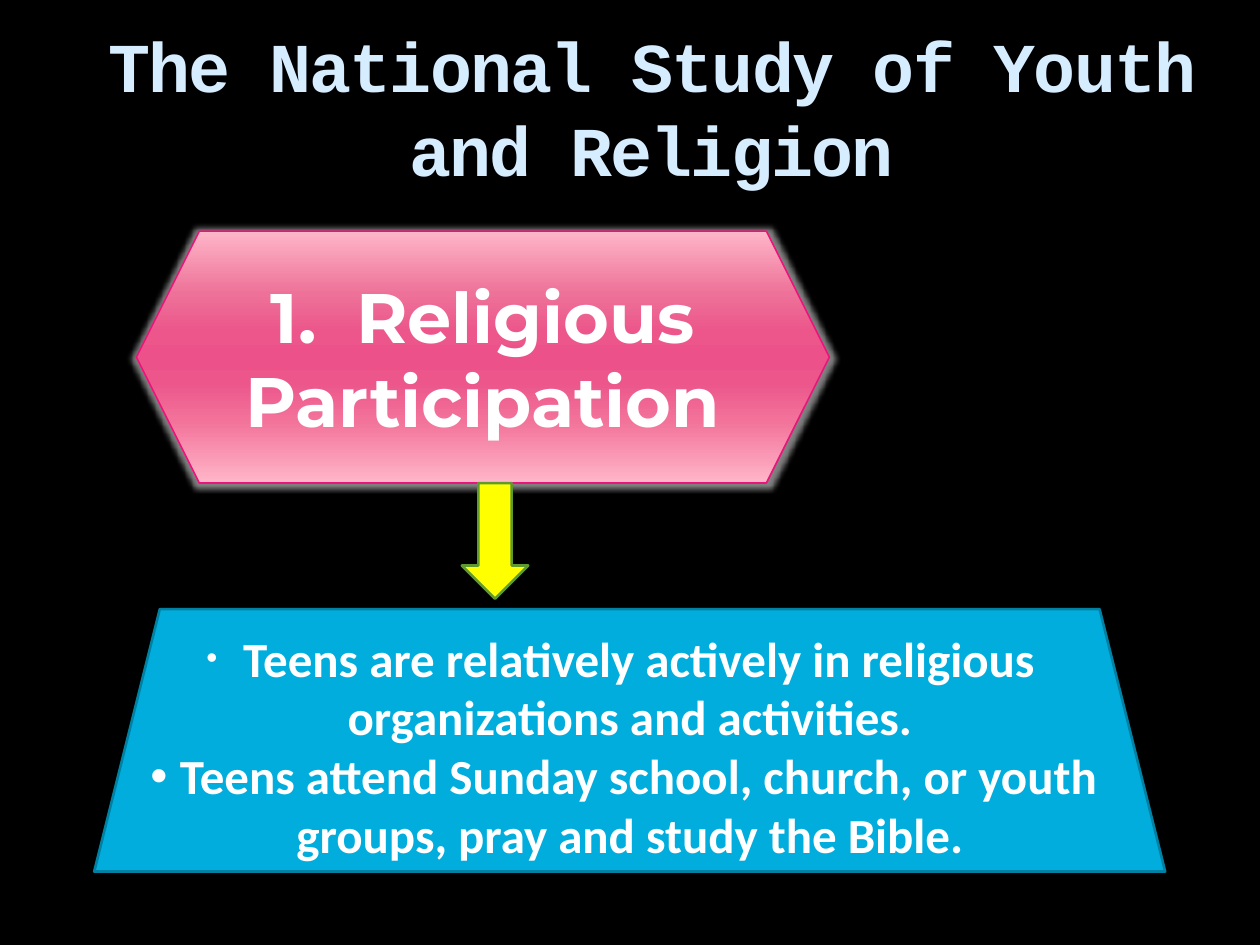
from dataclasses import dataclass

from lxml import etree
from pptx import Presentation
from pptx import util as u
from pptx.dml.color import RGBColor
from pptx.enum import shapes, text
from pptx.oxml import ns


@dataclass(frozen=True)
class Theme:
    back: str = "000000"
    title: str = "D6ECFF"
    light: str = "FFFFFF"
    blue: str = "00ADDC"
    teal: str = "0080A3"
    pink: str = "EA157A"
    yellow: str = "FFFF00"
    green: str = "5E9B2C"
    glow: str = "808080"
    blend: tuple = ((0, "FFB6C9"), (25, "ED7198"), (40, "EC568B"),
                    (50, "EC5289"), (60, "EC568B"), (75, "F2729A"),
                    (100, "FFB6C9"))
    mono: str = "Courier New"
    head: str = "Montserrat"
    body: str = "Calibri"
    big: int = 40
    mid: int = 28
    small: int = 18


T = Theme()
KIND = shapes.MSO_SHAPE


def rgb(code):
    return RGBColor.from_string(code)


def node(up, tag, **attrs):
    """Add an XML child with the given attributes."""
    kid = etree.SubElement(up, ns.qn(tag))
    for key, val in attrs.items():
        kid.set(key, str(val))
    return kid


def write(para, words, font=T.body, size=T.mid, color=T.light, track=0):
    """Add one bold, centred run to a paragraph."""
    para.alignment = text.PP_ALIGN.CENTER
    run = para.add_run()
    run.text = words
    run.font.name, run.font.size, run.font.bold = font, u.Pt(size), True
    run.font.color.rgb = rgb(color)
    if track:
        run.font._element.set("spc", str(track))


def frame(shape):
    """Give a shape's text frame wrapping and middle anchoring."""
    tf = shape.text_frame
    tf.word_wrap = True
    tf.auto_size = text.MSO_AUTO_SIZE.NONE
    tf.vertical_anchor = text.MSO_ANCHOR.MIDDLE
    return tf


def block(slide, kind, box, fill, line, width):
    """Add a filled, outlined preset shape without a shadow."""
    shape = slide.shapes.add_shape(kind, *map(u.Cm, box))
    shape.shadow.inherit = False
    shape.fill.solid()
    shape.fill.fore_color.rgb = rgb(fill)
    shape.line.color.rgb = rgb(line)
    shape.line.width = u.Pt(width)
    return shape


def shade(shape, stops):
    """Swap the solid fill for a vertical blend."""
    props = shape._element.spPr
    old = props.find(ns.qn("a:solidFill"))
    grad = etree.Element(ns.qn("a:gradFill"), rotWithShape="1")
    props.replace(old, grad)
    row = node(grad, "a:gsLst")
    for pos, code in stops:
        node(node(row, "a:gs", pos=pos * 1000), "a:srgbClr", val=code)
    node(grad, "a:lin", ang=90 * 60000, scaled=0)


def halo(shape, color):
    """Put a soft rim around the shape."""
    fx = shape._element.spPr.find(ns.qn("a:effectLst"))
    rim = node(fx, "a:outerShdw", blurRad=u.Pt(3), dist=u.Pt(0.5),
               dir=90 * 60000, sx=101500, sy=103000, algn="ctr",
               rotWithShape=0)
    node(rim, "a:srgbClr", val=color)


def bullet(para):
    props = para._p.get_or_add_pPr()
    node(props, "a:buFont", typeface="Arial")
    node(props, "a:buChar", char="•")


def title(slide, box, words):
    shape = slide.shapes.title
    shape.left, shape.top, shape.width, shape.height = map(u.Cm, box)
    tf = frame(shape)
    tf.margin_top = u.Cm(0.45)
    para = tf.paragraphs[0]
    para.line_spacing = u.Pt(48)
    write(para, words, font=T.mono, size=T.big, color=T.title, track=-100)


def points(slide, box, items):
    """Trapezoid with a bulleted list."""
    shape = block(slide, KIND.TRAPEZOID, box, T.blue, T.teal, 1.5)
    tf = frame(shape)
    for i, item in enumerate(items):
        para = tf.add_paragraph() if i else tf.paragraphs[0]
        if not i:
            write(para, " ", size=T.small)  # makes the first bullet small
        write(para, item)
        bullet(para)


def topic(slide, box, words):
    """Pink hexagon with the topic's name."""
    shape = block(slide, KIND.HEXAGON, box, T.pink, T.pink, 0.94)
    shade(shape, T.blend)
    halo(shape, T.glow)
    write(frame(shape).paragraphs[0], words, font=T.head, size=T.big)


def arrow(slide, box):
    block(slide, KIND.DOWN_ARROW, box, T.yellow, T.green, 1.5)


def main():
    deck = Presentation()
    deck.slide_width, deck.slide_height = u.Cm(25.4), u.Cm(19.05)
    slide = deck.slides.add_slide(deck.slide_layouts[5])
    slide.background.fill.solid()
    slide.background.fill.fore_color.rgb = rgb(T.back)

    title(slide, (1.7, 0, 22.86, 3.99),
          "The National Study of Youth and Religion")
    points(slide, (1.9, 12.28, 21.59, 5.29), (
        "Teens are relatively actively in religious organizations "
        "and activities.",
        "Teens attend Sunday school, church, or youth groups, "
        "pray and study the Bible."))
    topic(slide, (2.75, 4.66, 13.97, 5.08), "1.  Religious Participation")
    arrow(slide, (9.31, 9.74, 1.34, 2.33))
    deck.save("out.pptx")


if __name__ == "__main__":
    main()
